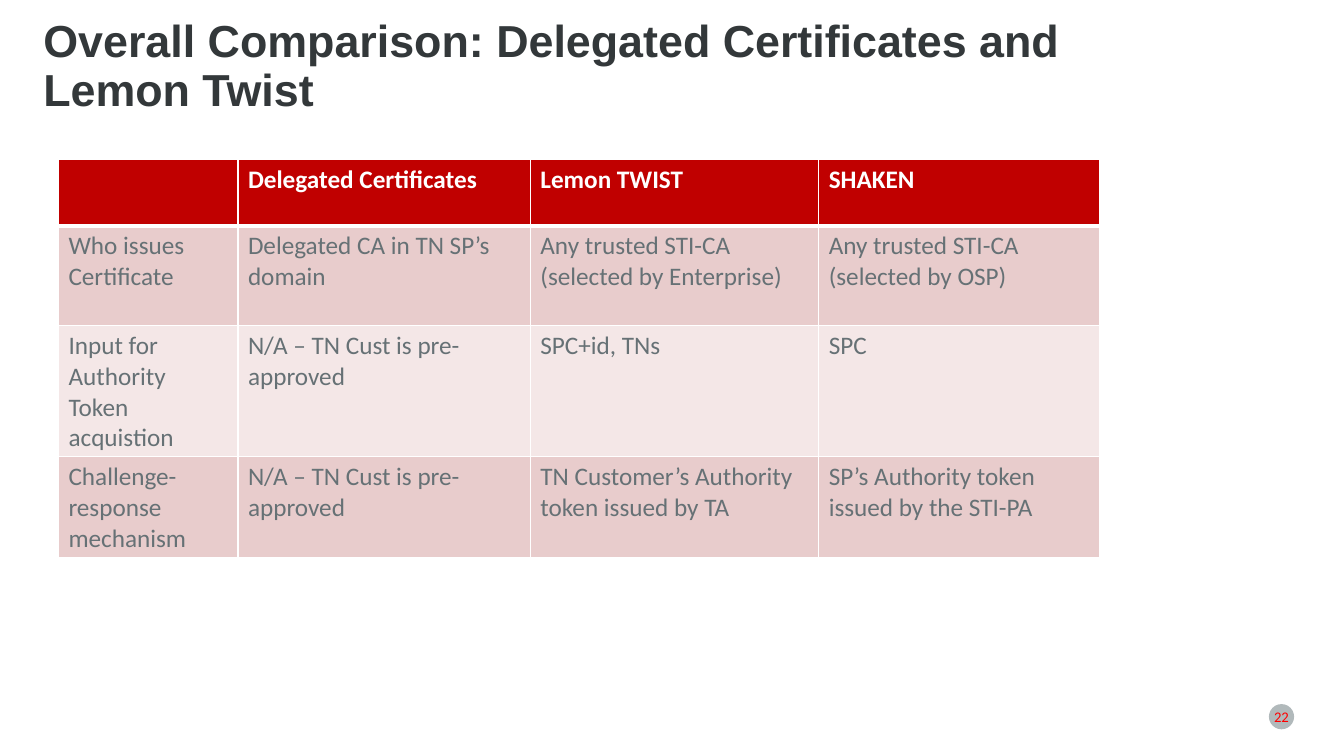
from lxml.etree import SubElement
from pptx import Presentation
from pptx.dml.color import RGBColor
from pptx.enum.shapes import MSO_SHAPE
from pptx.enum.text import MSO_ANCHOR, PP_ALIGN
from pptx.oxml.ns import qn
from pptx.util import Inches, Pt

COLORS = {
    "title": "33383A", "body": "667175", "white": "FFFFFF", "header": "C00000",
    "odd": "E8CCCC", "even": "F4E7E7", "badge": "B1B9BB", "number": "FF0000",
}
FORMATS = {
    "title": {"name": "Arial", "size": Pt(32), "bold": True},
    "header": {"name": "Calibri", "size": Pt(18), "bold": True},
    "body": {"name": "Calibri", "size": Pt(18), "bold": False},
    "number": {"name": "Calibri", "size": Pt(10.5), "bold": False},
}
COLUMNS = [1.78, 2.9, 2.86, 2.79]
ROWS = [0.66, 0.99, 0.99, 0.99]
COMPARISON = [
    ["", "Delegated Certificates", "Lemon TWIST", "SHAKEN"],
    ["Who issues\nCertificate", "Delegated CA in TN SP’s domain",
     "Any trusted STI-CA\n(selected by Enterprise)",
     "Any trusted STI-CA (selected by OSP)"],
    ["Input for Authority Token acquistion", "N/A – TN Cust is pre-approved",
     "SPC+id, TNs", "SPC"],
    ["Challenge-response mechanism", "N/A – TN Cust is pre-approved",
     "TN Customer’s Authority token issued by TA",
     "SP’s Authority token issued by the STI-PA"],
]


def color(name):
    return RGBColor.from_string(COLORS[name])


def write(frame, text, style, ink):
    frame.text = text
    for para in frame.paragraphs:
        for span in para.runs or [para]:
            for key, value in FORMATS[style].items():
                setattr(span.font, key, value)
            span.font.color.rgb = color(ink)


def add_text(page, box, text, style, margin):
    frame = page.shapes.add_textbox(*map(Inches, box)).text_frame
    frame.word_wrap = True
    frame.vertical_anchor = MSO_ANCHOR.MIDDLE
    for side in ("left", "top", "right", "bottom"):
        setattr(frame, f"margin_{side}", Inches(margin))
    write(frame, text, style, style)
    return frame.paragraphs[0]


def set_borders(cell, bottom):
    properties = cell._tc.get_or_add_tcPr()
    fill = properties[0]
    for tag, width in (("lnL", 1), ("lnR", 1), ("lnT", 1), ("lnB", bottom)):
        line = SubElement(properties, qn(f"a:{tag}"), w=str(Pt(width)))
        solid = SubElement(line, qn("a:solidFill"))
        SubElement(solid, qn("a:srgbClr"), val=COLORS["white"])
    properties.append(fill)  # the fill follows the border lines


def add_title(page, box):
    para = add_text(page, box, "Overall Comparison: Delegated Certificates and Lemon Twist",
                    "title", 0)
    para.line_spacing = 0.9


def add_comparison(page, left, top):
    box = (left, top, sum(COLUMNS), sum(ROWS))
    table = page.shapes.add_table(len(ROWS), len(COLUMNS), *map(Inches, box)).table
    for column, width in zip(table.columns, COLUMNS):
        column.width = Inches(width)
    for index, (row, height, texts) in enumerate(zip(table.rows, ROWS, COMPARISON)):
        row.height = Inches(height)
        style, ink = ("body", "body") if index else ("header", "white")
        shade = ("even", "odd")[index % 2] if index else "header"
        for cell, text in zip(row.cells, texts):
            write(cell.text_frame, text, style, ink)
            cell.fill.solid()
            cell.fill.fore_color.rgb = color(shade)
            # The rule under the header is thicker
            set_borders(cell, 1 if index else 3)


def add_page_number(page, box):
    left, top, width, height = box
    size = 0.25
    place = (left + (width - size) / 2, top + (height - size) / 2, size, size)
    badge = page.shapes.add_shape(MSO_SHAPE.OVAL, *map(Inches, place))
    badge.shadow.inherit = False
    badge.fill.solid()
    badge.fill.fore_color.rgb = color("badge")
    badge.line.fill.background()
    add_text(page, box, "22", "number", 0.05).alignment = PP_ALIGN.CENTER


def main():
    deck = Presentation()
    deck.slide_width, deck.slide_height = Inches(13.33), Inches(7.5)
    page = deck.slides.add_slide(deck.slide_layouts[6])
    add_title(page, (0.43, 0.18, 11.24, 0.98))
    add_comparison(page, 0.58, 1.58)
    add_page_number(page, (12.47, 6.97, 0.48, 0.28))
    deck.save("out.pptx")


if __name__ == "__main__":
    main()
